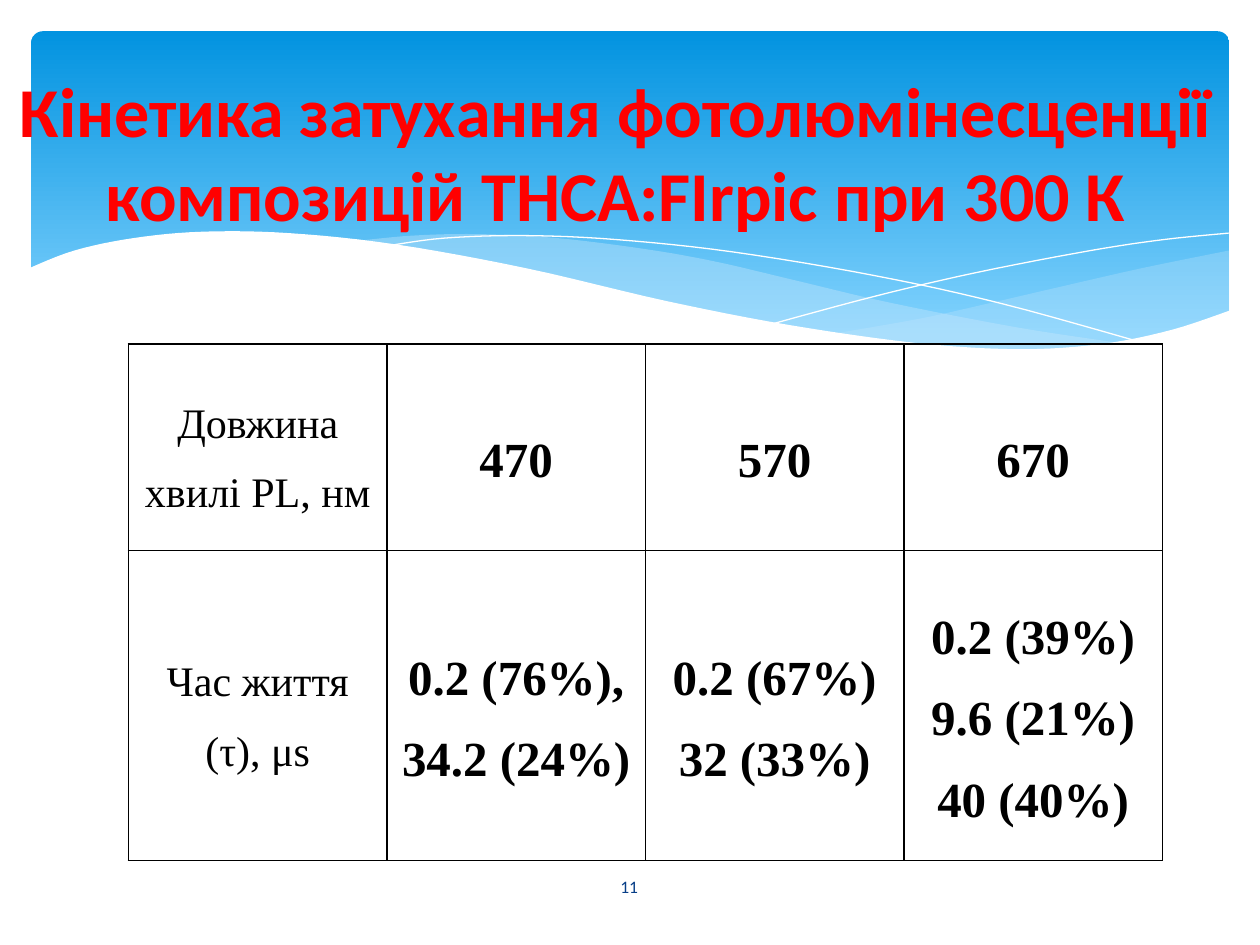
from lxml import etree
from pptx import Presentation, util as u
from pptx.dml.color import RGBColor
from pptx.enum import shapes, text
from pptx.oxml.ns import qn

# Content
TITLE = "Кінетика затухання фотолюмінесценції композицій THCA:FIrpic при 300\u00a0К"
SLIDE_NUMBER = "11"
ROWS = [
    ["Довжина хвилі PL, нм", "470", "570", "670"],
    ["Час життя (τ), μs", "0.2 (76%),\n34.2 (24%)", "0.2 (67%)\n32 (33%)",
     "0.2 (39%)\n9.6 (21%)\n40 (40%)"],
]
ROW_HEIGHTS = [4.17, 6.25]
COLUMN_WIDTH = 5.21
COLORS = {"sky_top": "0293E0", "sky_bottom": "83D3FE", "wave": "C6E7FC",
          "white": "FFFFFF", "black": "000000", "title": "FF0000", "number": "073E87"}

# Wave outlines in cm: each run of points becomes one smooth curve
RIGHT_WAVE = [
    [(24.78, 5.05), (23.01, 5.41), (21.13, 5.84), (19.79, 6.15), (18.52, 6.43), (16.79, 6.73)],
    [(16.79, 6.73), (18.24, 6.88), (19.84, 7.04), (21.21, 7.04), (22.35, 6.91),
     (23.39, 6.73), (24.1, 6.53), (24.78, 6.27)],
]
MIDDLE_WAVE = [
    [(22.68, 6.93), (20.5, 6.6), (17.93, 6.1), (15.98, 5.64), (14.45, 5.28), (13.06, 5.03),
     (11.23, 4.8), (9.65, 4.72), (8.33, 4.75), (7.26, 4.85)],
    [(7.26, 4.85), (9.19, 5.16), (11.4, 5.64), (14.38, 6.3), (16.51, 6.71), (18.34, 6.96),
     (19.94, 7.06), (21.54, 7.04), (22.68, 6.93)],
]
FALLING_LINE = [[(7.85, 4.95), (8.97, 4.8), (10.57, 4.75), (12.42, 4.83), (14.78, 5.08),
                 (17.65, 5.56), (20.19, 6.12), (23.04, 6.91)]]
RISING_LINE = [[(15.57, 6.53), (17.65, 5.97), (19.71, 5.49), (22, 5.05), (23.47, 4.83),
                (24.77, 4.7)]]
WHITE_WAVE = [
    [(24.82, 6.25), (23.62, 6.65), (22.23, 6.93), (20.55, 7.04), (18.44, 6.91), (15.9, 6.55),
     (13.44, 6.07), (10.62, 5.41), (8, 4.93), (5.84, 4.7), (4.09, 4.67), (2.69, 4.8),
     (1.5, 5.05), (0.58, 5.41)],
    [(0.58, 8.36), (24.82, 8.36)],
]
# Outline, fill colour, opacity in percent, line colour
WAVES = [
    (RIGHT_WAVE, "wave", 29, None),
    (MIDDLE_WAVE, "wave", 40, None),
    (FALLING_LINE, None, 100, "white"),
    (RISING_LINE, None, 100, "white"),
    (WHITE_WAVE, "white", 100, None),
]


def color(name):
    return RGBColor.from_string(COLORS[name])


def smooth(points, steps=6):
    """Points of a Catmull-Rom curve through the given points."""
    ends = [points[0], *points, points[-1]]
    curve = [points[0]]
    for a, b, c, d in zip(ends, ends[1:], ends[2:], ends[3:]):
        for step in range(1, steps + 1):
            t = step / steps
            curve.append(tuple(
                (2 * q + (r - p) * t + (2 * p - 5 * q + 4 * r - s) * t ** 2
                 + (3 * q - p - 3 * r + s) * t ** 3) / 2
                for p, q, r, s in zip(a, b, c, d)))
    return curve


def add_wave(slide, runs, fill, opacity, line):
    points = [(u.Cm(x), u.Cm(y)) for run in runs for x, y in smooth(run)]
    builder = slide.shapes.build_freeform(*points[0])
    builder.add_line_segments(points[1:], close=fill is not None)
    shape = builder.convert_to_shape()
    shape.shadow.inherit = False
    if fill:
        shape.fill.solid()
        shape.fill.fore_color.rgb = color(fill)
        if opacity < 100:
            tint = shape._element.spPr.find(".//" + qn("a:srgbClr"))
            etree.SubElement(tint, qn("a:alpha"), val=str(opacity * 1000))
    else:
        shape.fill.background()
    if line:
        shape.line.color.rgb = color(line)
        shape.line.width = u.Pt(0)
    else:
        shape.line.fill.background()


def write(frame, content, size, font, ink, bold=False, spacing=None):
    frame.word_wrap = True
    frame.text = content
    frame.vertical_anchor = text.MSO_ANCHOR.MIDDLE
    for paragraph in frame.paragraphs:
        paragraph.alignment = text.PP_ALIGN.CENTER
        paragraph.line_spacing = spacing
        paragraph.font.size = u.Pt(size)
        paragraph.font.name = font
        paragraph.font.bold = bold
        paragraph.font.color.rgb = color(ink)


def add_borders(cell):
    properties = cell._tc.get_or_add_tcPr()
    for side in ("lnL", "lnR", "lnT", "lnB"):
        border = etree.SubElement(properties, qn("a:" + side), w=str(u.Pt(1)))
        fill = etree.SubElement(border, qn("a:solidFill"))
        etree.SubElement(fill, qn("a:srgbClr"), val=COLORS["black"])


def main():
    presentation = Presentation()
    presentation.slide_width, presentation.slide_height = u.Cm(25.4), u.Cm(19.05)
    slide = presentation.slides.add_slide(presentation.slide_layouts[5])

    # Sky panel
    sky = slide.shapes.add_shape(shapes.MSO_SHAPE.ROUNDED_RECTANGLE,
                                 u.Cm(0.63), u.Cm(0.63), u.Cm(24.15), u.Cm(6.86))
    sky.adjustments[0] = 0.034
    sky.shadow.inherit = False
    sky.line.fill.background()
    sky.fill.gradient()
    sky.fill.gradient_angle = 270
    stops = zip(sky.fill.gradient_stops, ("sky_top", "sky_bottom"), (0, 0.9))
    for stop, name, position in stops:
        stop.color.rgb = color(name)
        stop.position = position

    # Waves
    for wave in WAVES:
        add_wave(slide, *wave)

    # Title, brought in front of the waves
    title = slide.shapes.title
    title.left, title.top, title.width, title.height = u.Cm(0), u.Cm(0.94), u.Cm(24.82), u.Cm(4.22)
    write(title.text_frame, TITLE, 40, "Calibri", "title", bold=True)
    title.text_frame.auto_size = text.MSO_AUTO_SIZE.NONE
    slide.shapes._spTree.append(title._element)

    # Slide number
    number = slide.shapes.add_textbox(u.Cm(11.07), u.Cm(17.37), u.Cm(3.23), u.Cm(1.02))
    write(number.text_frame, SLIDE_NUMBER, 10, "Calibri", "number")

    # Lifetime table
    columns = len(ROWS[0])
    table = slide.shapes.add_table(len(ROWS), columns, u.Cm(2.59), u.Cm(6.93),
                                   u.Cm(COLUMN_WIDTH * columns), u.Cm(sum(ROW_HEIGHTS))).table
    table.first_row = table.horz_banding = False
    for column in table.columns:
        column.width = u.Cm(COLUMN_WIDTH)
    for row, height, values in zip(table.rows, ROW_HEIGHTS, ROWS):
        row.height = u.Cm(height)
        for index, (cell, value) in enumerate(zip(row.cells, values)):
            is_value = index > 0
            write(cell.text_frame, value, 28 if is_value else 24, "Times New Roman",
                  "black", bold=is_value, spacing=1.5)
            cell.vertical_anchor = text.MSO_ANCHOR.MIDDLE
            cell.margin_left = cell.margin_right = u.Cm(0.18)
            cell.margin_top = cell.margin_bottom = 0
            add_borders(cell)
            cell.fill.background()

    presentation.save("out.pptx")


if __name__ == "__main__":
    main()
